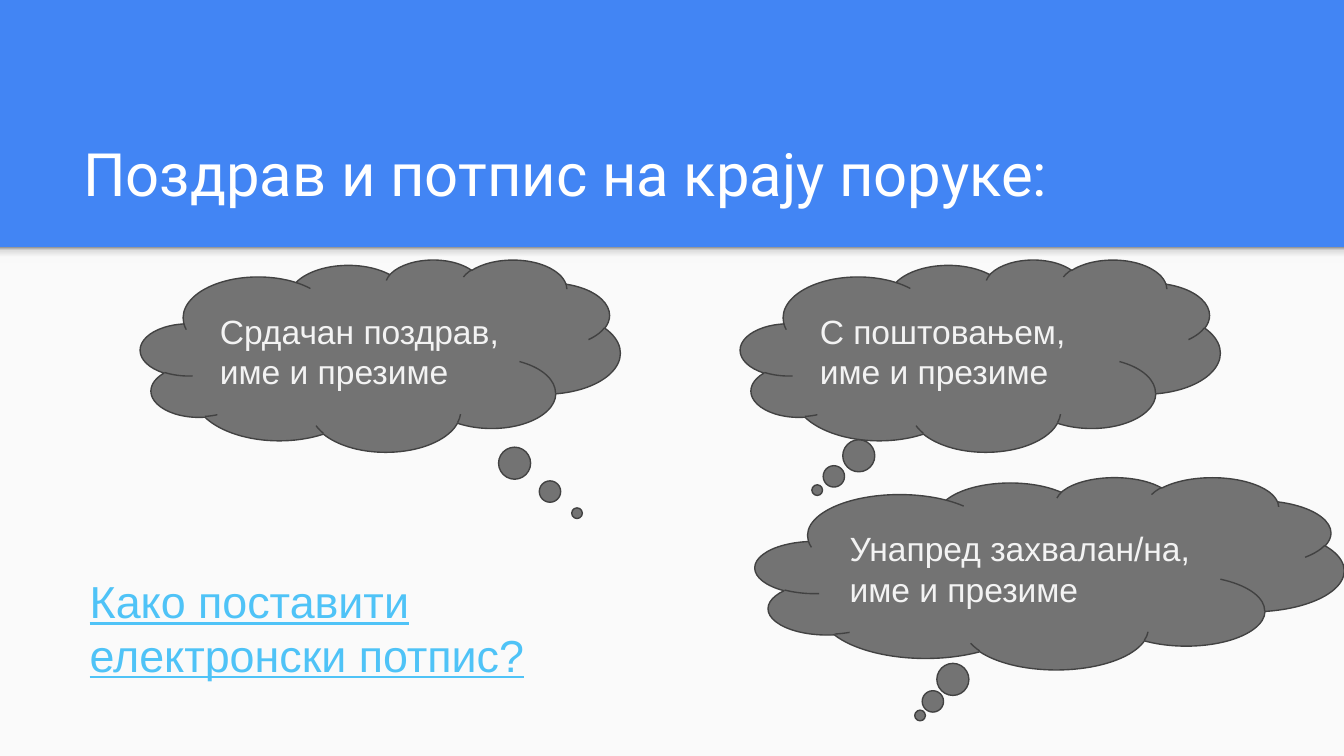
"""Build the slide on closing greetings and signatures in messages."""
from copy import deepcopy

from pptx import Presentation
from pptx.dml.color import RGBColor
from pptx.enum import shapes, text
from pptx.oxml import ns
from pptx.util import Pt

WIDTH, HEIGHT, BAND = 720, 405, 132.5
BLUE, PAPER, GREY, OUTLINE = "4285F4", "FAFAFA", "737373", "424242"
SHADE = [(0, "F9F9F9"), (0.36, "F9F9F9"), (0.8, "DEDEDE"), (1, "999999")]
TEXTS = [
    ("Поздрав и потпис на крају поруке:", (37.5, 58.3, 647.3, 60.5),
     "Roboto", 32, "FFFFFF", False, text.MSO_ANCHOR.BOTTOM),
    ("Како поставити електронски потпис?", (41, 300.2, 315.4, 60.5),
     "Arial", 24, "4FC3F7", True, text.MSO_ANCHOR.TOP),
]
CLOUDS = [
    ("Срдачан поздрав, име и презиме", (75.3, 139, 257, 103), (0.41, 0.82)),
    ("С поштовањем, име и презиме", (396.7, 139, 257, 103), (-0.34, 0.7)),
    ("Унапред захвалан/на, име и презиме", (404.6, 255.6, 315.4, 103), (-0.22, 0.74)),
]


def rgb(value):
    return RGBColor.from_string(value)


def write(s, words, font, size, color, underline, anchor):
    tf = s.text_frame
    tf.word_wrap = True
    tf.vertical_anchor = anchor
    tf.margin_left = tf.margin_right = tf.margin_top = tf.margin_bottom = Pt(7.2)
    p = tf.paragraphs[0]
    p.text = words
    p.alignment = text.PP_ALIGN.LEFT
    p.font.name, p.font.size, p.font.underline = font, Pt(size), underline
    p.font.color.rgb = rgb(color)


def add_shape(slide, kind, box, fill=None, line=None):
    s = slide.shapes.add_shape(kind, *map(Pt, box))
    s.shadow.inherit = False
    if fill:
        s.fill.solid()
        s.fill.fore_color.rgb = rgb(fill)
    if line:
        s.line.color.rgb = rgb(line)
        s.line.width = Pt(0.75)
    else:
        s.line.fill.background()
    return s


def shade(s, stops):
    s.fill.gradient()
    s.fill.gradient_angle = 90
    stop_list = s._element.spPr.find(".//" + ns.qn("a:gsLst"))
    for _ in range(len(stops) - len(stop_list)):
        stop_list.append(deepcopy(stop_list[-1]))
    for stop, (position, color) in zip(s.fill.gradient_stops, stops):
        stop.position = position
        stop.color.rgb = rgb(color)


def main():
    prs = Presentation()
    prs.slide_width, prs.slide_height = Pt(WIDTH), Pt(HEIGHT)
    slide = prs.slides.add_slide(prs.slide_layouts[6])
    slide.background.fill.solid()
    slide.background.fill.fore_color.rgb = rgb(BLUE)

    rect = shapes.MSO_SHAPE.RECTANGLE
    add_shape(slide, rect, (0, BAND, WIDTH, HEIGHT - BAND), PAPER)
    shade(add_shape(slide, rect, (0, BAND, WIDTH, 8.6)), SHADE)

    for words, box, tail in CLOUDS:
        s = add_shape(slide, shapes.MSO_SHAPE.CLOUD_CALLOUT, box, GREY, OUTLINE)
        s.adjustments[0], s.adjustments[1] = tail
        write(s, words, "Arial", 18, "F3F3F3", False, text.MSO_ANCHOR.MIDDLE)

    for words, box, *style in TEXTS:
        write(slide.shapes.add_textbox(*map(Pt, box)), words, *style)

    prs.save("out.pptx")


if __name__ == "__main__":
    main()
